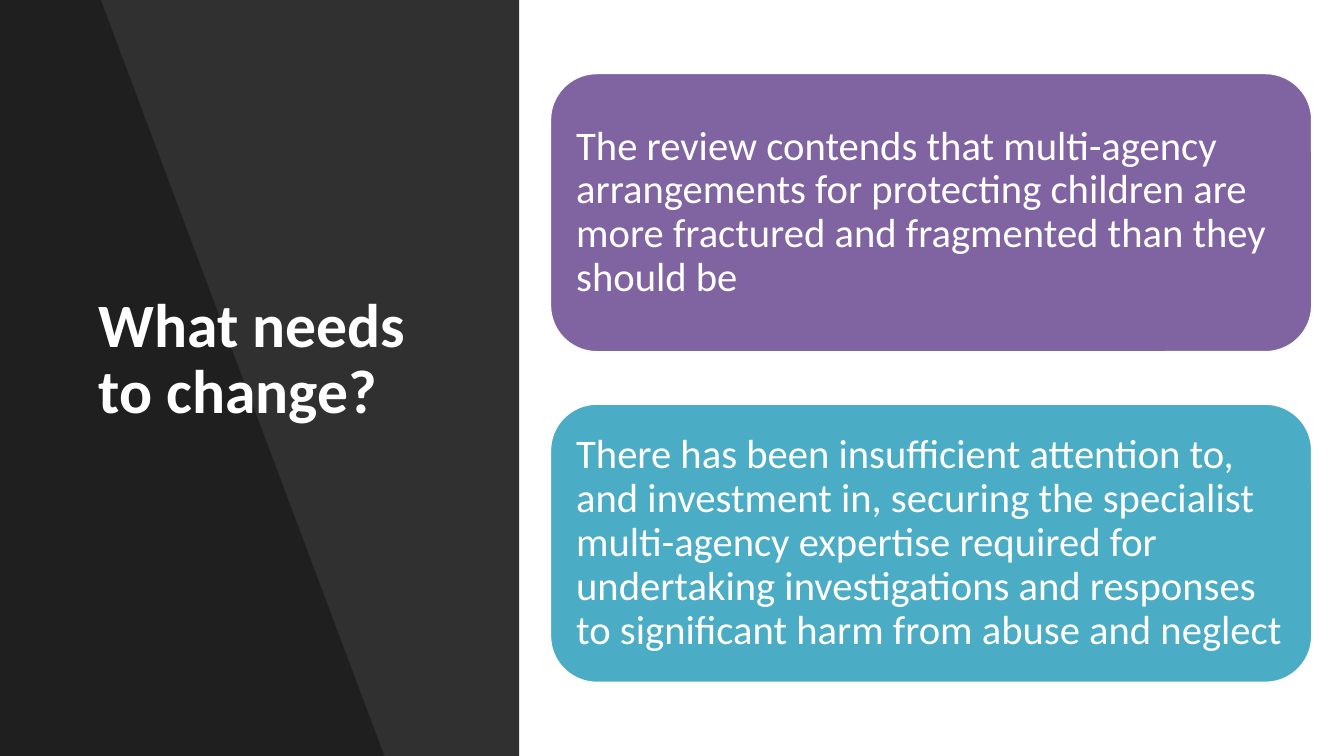
"""Build the slide "What needs to change?" with a dark title panel and two cards."""
from lxml.etree import SubElement
from pptx import Presentation
from pptx.dml.color import RGBColor
from pptx.enum.shapes import MSO_SHAPE
from pptx.enum.text import MSO_ANCHOR, PP_ALIGN
from pptx.oxml.ns import qn
from pptx.util import Inches, Pt


def paint(shape, color, alpha=None):
    shape.shadow.inherit = False
    shape.fill.solid()
    shape.fill.fore_color.rgb = RGBColor.from_string(color)
    shape.line.fill.background()
    if alpha:
        tint = shape.fill._xPr.find(qn("a:solidFill"))[0]
        SubElement(tint, qn("a:alpha")).set("val", str(alpha * 1000))


def write(shape, text, size, bold=False):
    frame = shape.text_frame
    frame.word_wrap = True
    frame.vertical_anchor = MSO_ANCHOR.MIDDLE
    para = frame.paragraphs[0]
    para.alignment = PP_ALIGN.LEFT
    para.line_spacing = 0.9
    run = para.add_run()
    run.text = text
    run.font.name = "Calibri"
    run.font.size = Pt(size)
    run.font.bold = bold
    run.font.color.rgb = RGBColor.from_string("FFFFFF")


deck = Presentation()
deck.slide_width, deck.slide_height = Inches(13.33), Inches(7.5)
shapes = deck.slides.add_slide(deck.slide_layouts[6]).shapes

panel = shapes.add_shape(MSO_SHAPE.RECTANGLE, 0, 0, Inches(5.15), Inches(7.5))
paint(panel, "000000", 81)

pen = shapes.build_freeform(0, 0, scale=Inches(1))
pen.add_line_segments([(0.95, 0), (3.59, 7.5), (0, 7.5)], close=True)
paint(pen.convert_to_shape(), "000000", 35)

title = shapes.add_textbox(Inches(0.88), Inches(0.7), Inches(3.91), Inches(5.75))
title.text_frame.margin_right = Inches(0.2)
write(title, "What needs to change?", 44, True)

cards = [
    ("8064A2", "The review contends that multi-agency arrangements for protecting "
               "children are more fractured and fragmented than they should be"),
    ("4BACC6", "There has been insufficient attention to, and investment in, securing "
               "the specialist multi-agency expertise required for undertaking "
               "investigations and responses to significant harm from abuse and neglect"),
]
for row, (color, text) in enumerate(cards):
    card = shapes.add_shape(MSO_SHAPE.ROUNDED_RECTANGLE, Inches(5.46),
                            Inches(0.73 + 3.28 * row), Inches(7.55), Inches(2.76))
    paint(card, color)
    card.line.color.rgb = RGBColor.from_string("FFFFFF")
    card.line.width = Pt(1)
    frame = card.text_frame
    frame.margin_left = frame.margin_right = Inches(0.12)
    frame.margin_top = frame.margin_bottom = Inches(0.12)
    write(card, text, 29)

deck.save("out.pptx")
